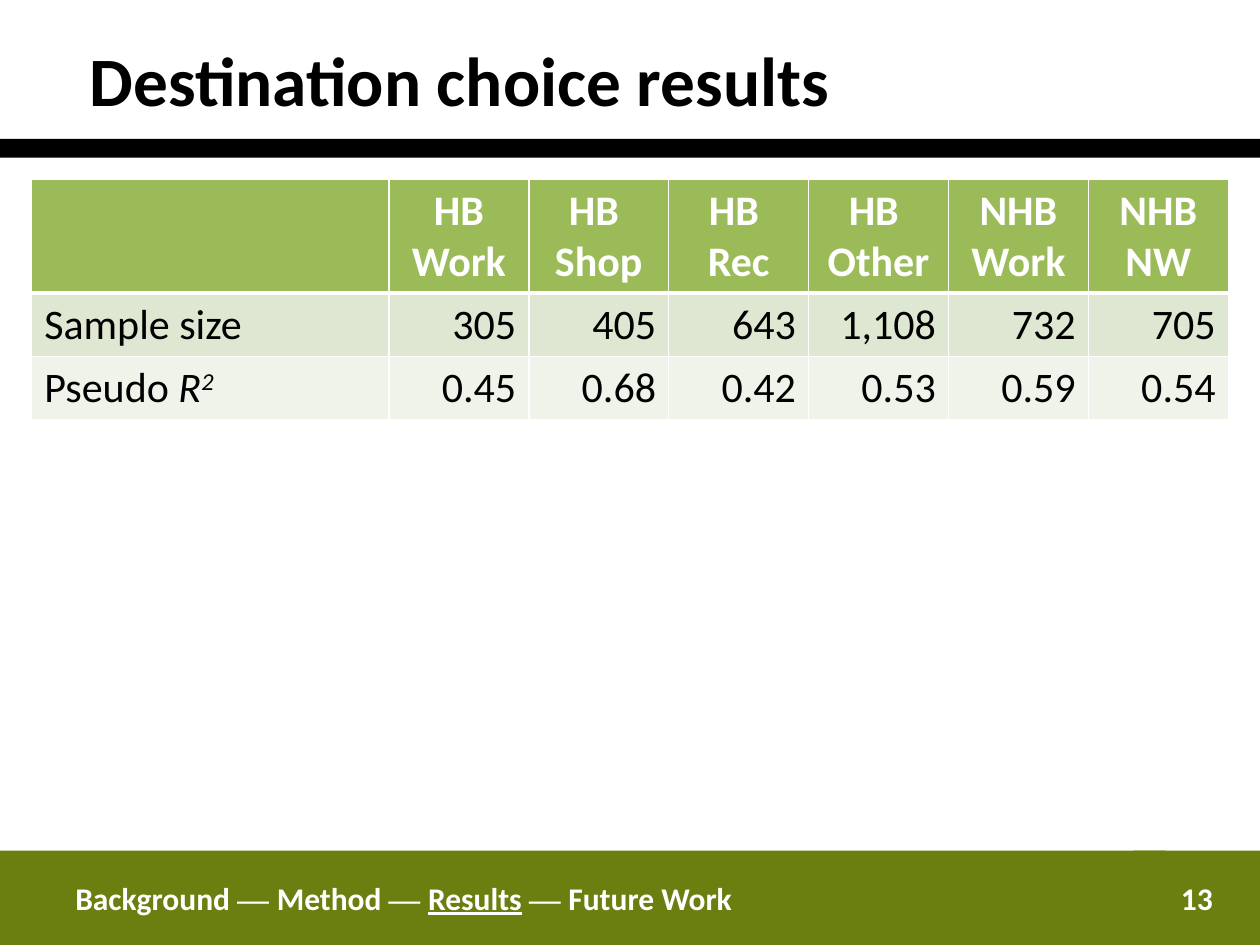
from lxml import etree
from pptx import Presentation
from pptx.dml.color import RGBColor
from pptx.enum.shapes import MSO_SHAPE
from pptx.enum.text import MSO_ANCHOR, PP_ALIGN
from pptx.oxml.ns import qn
from pptx.util import Cm, Pt

COLORS = {
    "black": "000000",
    "white": "FFFFFF",
    "olive": "6A7F10",
    "header": "9BBB59",
    "band1": "DEE7D1",
    "band2": "EFF3EA",
}
BODY_FONT = "Calibri"
DASH_FONT = "Times New Roman"

HEADERS = ["", "HB Work", "HB \nShop", "HB \nRec", "HB \nOther", "NHB Work", "NHB NW"]
SAMPLE_SIZES = ["305", "405", "643", "1,108", "732", "705"]
PSEUDO_R2 = ["0.45", "0.68", "0.42", "0.53", "0.59", "0.54"]
SECTIONS = ["Background", "Method", "Results", "Future Work"]
CURRENT_SECTION = "Results"


def rgb(name):
    return RGBColor.from_string(COLORS[name])


def add_text(p, text, size=24, color="black", font=BODY_FONT, bold=False,
             italic=False, underline=False, superscript=False):
    r = p.add_run()
    r.text = text
    r.font.name = font
    r.font.size = Pt(size)
    r.font.color.rgb = rgb(color)
    r.font.bold = bold
    r.font.italic = italic
    r.font.underline = underline
    if superscript:
        r._r.get_or_add_rPr().set("baseline", "30000")


def add_bar(s, left, top, width, height, color):
    sp = s.shapes.add_shape(MSO_SHAPE.RECTANGLE, Cm(left), Cm(top), Cm(width), Cm(height))
    sp.shadow.inherit = False
    sp.fill.solid()
    sp.fill.fore_color.rgb = rgb(color)
    sp.line.fill.background()
    sp.text_frame.vertical_anchor = MSO_ANCHOR.MIDDLE
    return sp


def add_title(s, text):
    tf = s.shapes.add_textbox(Cm(0), Cm(0), Cm(18), Cm(3.18)).text_frame
    tf.word_wrap = True
    tf.vertical_anchor = MSO_ANCHOR.MIDDLE
    tf.margin_left = Cm(1.81)
    add_text(tf.paragraphs[0], text, size=39.6, bold=True)


def add_footer(s, number):
    add_bar(s, 0, 17.15, 1.27, 1.9, "olive")
    page = add_bar(s, 22.86, 17.15, 2.54, 1.9, "olive")
    p = page.text_frame.paragraphs[0]
    p.alignment = PP_ALIGN.CENTER
    style = {"size": 18, "color": "white", "bold": True}
    add_text(p, number, **style)

    trail = add_bar(s, 1.27, 17.15, 22.23, 1.9, "olive")
    p = trail.text_frame.paragraphs[0]
    p.alignment = PP_ALIGN.LEFT
    for i, section in enumerate(SECTIONS):
        if i:
            add_text(p, " ", **style)
            add_text(p, "— ", font=DASH_FONT, **style)
        add_text(p, section, underline=section == CURRENT_SECTION, **style)


def set_borders(cell, bottom=1, top=1):
    """Draw white cell borders; widths are in points."""
    tcPr = cell._tc.get_or_add_tcPr()
    widths = {"a:lnL": 1, "a:lnR": 1, "a:lnT": top, "a:lnB": bottom}
    for i, (tag, width) in enumerate(widths.items()):
        ln = etree.Element(qn(tag), w=str(Pt(width)))
        fill = etree.SubElement(ln, qn("a:solidFill"))
        etree.SubElement(fill, qn("a:srgbClr"), val=COLORS["white"])
        tcPr.insert(i, ln)


def fill_cell(cell, text, align, **style):
    tf = cell.text_frame
    for i, line in enumerate(text.split("\n")):
        p = tf.add_paragraph() if i else tf.paragraphs[0]
        p.alignment = align
        if line:
            add_text(p, line, **style)


def add_results_table(s):
    rows = [HEADERS, ["Sample size", *SAMPLE_SIZES], ["Pseudo ", *PSEUDO_R2]]
    fills = ["header", "band1", "band2"]
    heights = [2.3, 1.28, 1.28]
    table = s.shapes.add_table(len(rows), len(HEADERS), Cm(0.64), Cm(3.61),
                               Cm(24.12), Cm(sum(heights))).table
    for j, col in enumerate(table.columns):
        col.width = Cm(2.82 if j else 7.2)
    for i, values in enumerate(rows):
        table.rows[i].height = Cm(heights[i])
        for j, value in enumerate(values):
            cell = table.cell(i, j)
            cell.fill.solid()
            cell.fill.fore_color.rgb = rgb(fills[i])
            set_borders(cell, bottom=1 if i else 3, top=3 if i == 1 else 1)
            if i == 0:
                fill_cell(cell, value, PP_ALIGN.CENTER, color="white", bold=True)
            else:
                fill_cell(cell, value, PP_ALIGN.RIGHT if j else PP_ALIGN.LEFT)
    p = table.cell(2, 0).text_frame.paragraphs[0]
    add_text(p, "R", italic=True)
    add_text(p, "2", italic=True, superscript=True)


def main():
    prs = Presentation()
    prs.slide_width, prs.slide_height = Cm(25.4), Cm(19.05)
    s = prs.slides.add_slide(prs.slide_layouts[6])
    add_bar(s, 0, 2.8, 25.4, 0.38, "black")
    add_title(s, "Destination choice results")
    add_footer(s, "13")
    add_results_table(s)
    prs.save("out.pptx")


if __name__ == "__main__":
    main()
